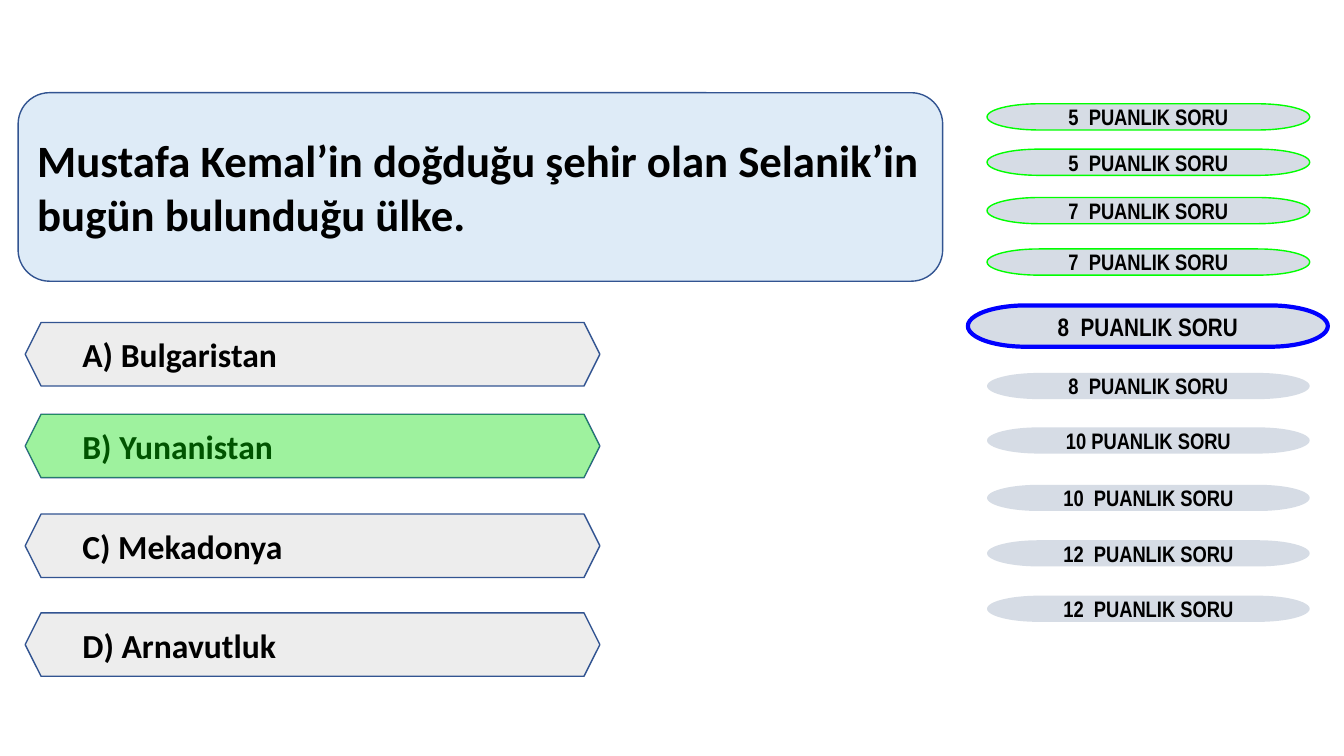
"""Build a quiz slide with a question, four answers and a ladder of points."""
import dataclasses

import lxml.etree
import pptx
import pptx.dml.color
import pptx.enum.shapes
import pptx.enum.text
import pptx.oxml.ns
import pptx.util

Inches = pptx.util.Inches
Shapes = pptx.enum.shapes.MSO_SHAPE
Align = pptx.enum.text.PP_ALIGN


@dataclasses.dataclass(frozen=True)
class Theme:
    """Colours, fonts and type sizes of the quiz."""
    ink: str = "000000"
    border: str = "325491"
    question_fill: str = "DEEBF7"
    answer_fill: str = "EDEDED"
    step_fill: str = "D6DCE5"
    passed: str = "00FF00"
    current: str = "0000FF"
    body_font: str = "Calibri"
    step_font: str = "Arial Narrow"
    question_size: int = 32
    answer_size: int = 24
    current_size: int = 18
    step_size: int = 16


def rgb(value):
    """Turn a hex string into a colour."""
    return pptx.dml.color.RGBColor.from_string(value)


def write_text(shape, text, *, font, size, color, align=Align.LEFT, inset=None):
    """Write bold, vertically centred text into a shape."""
    frame = shape.text_frame
    frame.word_wrap = True
    frame.vertical_anchor = pptx.enum.text.MSO_ANCHOR.MIDDLE
    if inset is not None:
        frame.margin_left = frame.margin_right = Inches(inset)
        frame.margin_top = frame.margin_bottom = Inches(inset)
    paragraph = frame.paragraphs[0]
    paragraph.alignment = align
    run = paragraph.add_run()
    run.text = text
    run.font.name = font
    run.font.size = pptx.util.Pt(size)
    run.font.bold = True
    run.font.color.rgb = rgb(color)


class QuizSlide:
    """Draws the quiz elements on one slide in one theme."""

    def __init__(self, slide, theme):
        """Keep the slide and its theme."""
        self.slide = slide
        self.theme = theme

    def panel(self, kind, box, fill, line=None, line_width=1):
        """Add a filled preset shape with an optional outline."""
        shape = self.slide.shapes.add_shape(kind, *map(Inches, box))
        shape.shadow.inherit = False
        shape.fill.solid()
        shape.fill.fore_color.rgb = rgb(fill)
        if line:
            shape.line.color.rgb = rgb(line)
            shape.line.width = pptx.util.Pt(line_width)
        else:
            shape.line.fill.background()
        return shape

    def question(self, box, text):
        """Add the question panel."""
        theme = self.theme
        panel = self.panel(Shapes.ROUNDED_RECTANGLE, box, theme.question_fill, theme.border)
        write_text(panel, text, font=theme.body_font, size=theme.question_size, color=theme.ink)

    def answer(self, box, text):
        """Add one answer option."""
        theme = self.theme
        option = self.panel(Shapes.HEXAGON, box, theme.answer_fill, theme.border)
        write_text(option, text, font=theme.body_font, size=theme.answer_size,
                   color=theme.ink, inset=0.04)

    def highlight(self, box, opacity):
        """Lay a translucent marker over the right answer."""
        marker = self.panel(Shapes.HEXAGON, box, self.theme.passed)
        qn = pptx.oxml.ns.qn
        color = next(marker.fill._xPr.iter(qn("a:srgbClr")))
        lxml.etree.SubElement(color, qn("a:alpha")).set("val", str(opacity * 1000))

    def step(self, box, text, line=None, line_width=1, size=None):
        """Add one step of the points ladder."""
        theme = self.theme
        pill = self.panel(Shapes.FLOWCHART_TERMINATOR, box, theme.step_fill, line, line_width)
        write_text(pill, text, font=theme.step_font, size=size or theme.step_size,
                   color=theme.ink, align=Align.CENTER)


def main():
    """Compose and save the slide."""
    deck = pptx.Presentation()
    deck.slide_width, deck.slide_height = Inches(13.33), Inches(7.5)
    theme = Theme()
    quiz = QuizSlide(deck.slides.add_slide(deck.slide_layouts[6]), theme)

    quiz.question((0.18, 0.92, 9.17, 1.87),
                  "Mustafa Kemal’in doğduğu şehir olan Selanik’in bugün bulunduğu ülke.")

    answers = {"A) Bulgaristan": 3.2, "B) Yunanistan": 4.11,
               "C) Mekadonya": 5.1, "D) Arnavutluk": 6.08}
    for text, top in answers.items():
        quiz.answer((0.25, top, 5.7, 0.63), text)
    quiz.highlight((0.25, answers["B) Yunanistan"], 5.7, 0.63), opacity=33)

    passed_steps = [("5  ", 1.03), ("5  ", 1.48), ("7  ", 1.96), ("7  ", 2.47)]
    open_steps = [("8  ", 3.7), ("10 ", 4.24), ("10  ", 4.81), ("12  ", 5.36), ("12  ", 5.91)]
    for steps, outline in ((passed_steps, theme.passed), (open_steps, None)):
        for points, top in steps:
            quiz.step((9.79, top, 3.2, 0.26), f"{points}PUANLIK SORU", outline)
    quiz.step((9.6, 3.03, 3.57, 0.41), "8  PUANLIK SORU", theme.current,
              line_width=3, size=theme.current_size)

    deck.save("out.pptx")


if __name__ == "__main__":
    main()
